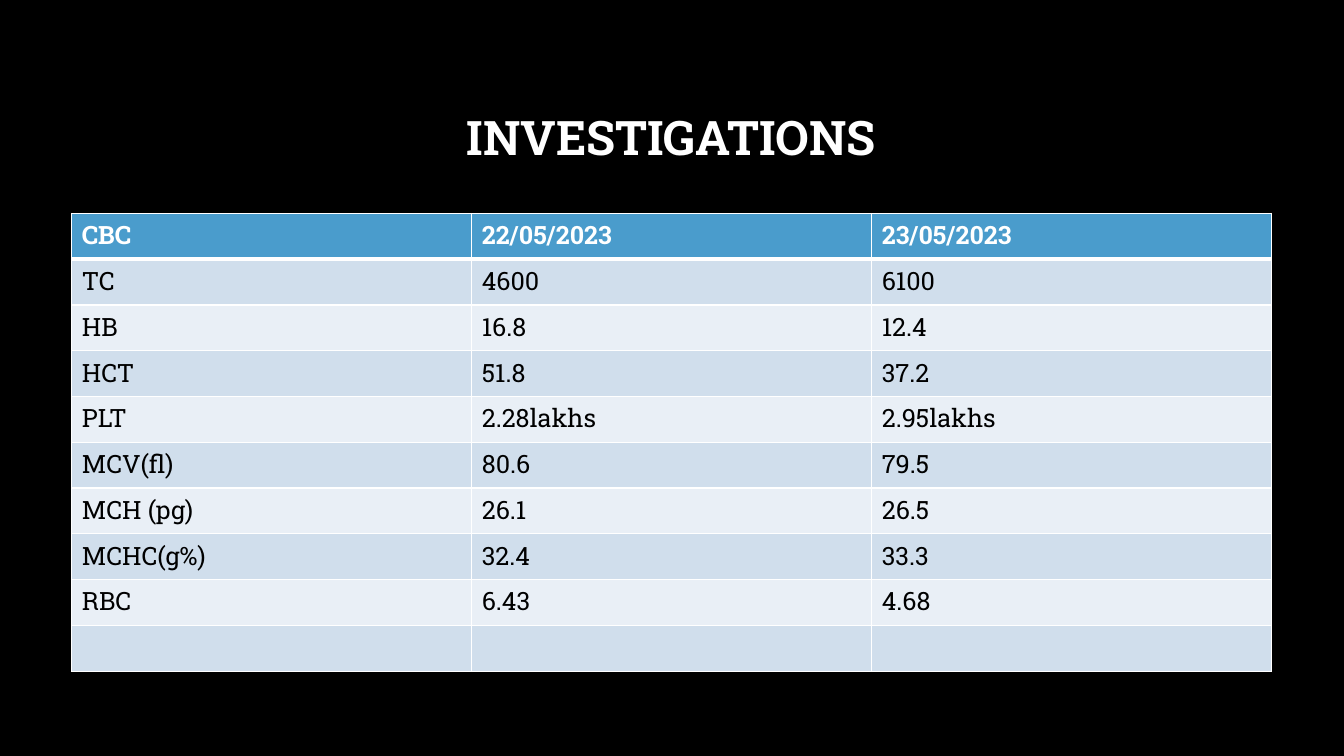
from lxml import etree
from pptx import Presentation
from pptx.dml.color import RGBColor
from pptx.enum import text
from pptx.oxml import ns
from pptx.util import Cm, Pt

COLORS = {
    "background": "000000",
    "light": "FFFFFF",
    "dark": "000000",
    "header": "4A9CCC",
    "odd": "D0DEEC",
    "even": "E9EFF6",
}
FONT = "Roboto Slab"
BLOOD_COUNTS = [
    ("CBC", "22/05/2023", "23/05/2023"),
    ("TC", "4600", "6100"),
    ("HB", "16.8", "12.4"),
    ("HCT", "51.8", "37.2"),
    ("PLT", "2.28lakhs", "2.95lakhs"),
    ("MCV(fl)", "80.6", "79.5"),
    ("MCH (pg)", "26.1", "26.5"),
    ("MCHC(g%)", "32.4", "33.3"),
    ("RBC", "6.43", "4.68"),
    ("", "", ""),
]


def rgb(color):
    return RGBColor.from_string(COLORS[color])


def write(frame, wording, size=18, color="dark", bold=False,
          align=text.PP_ALIGN.LEFT, spacing=1.0):
    paragraph = frame.paragraphs[0]
    paragraph.alignment = align
    paragraph.line_spacing = spacing
    paragraph.font.size = Pt(size)
    if wording:
        run = paragraph.add_run()
        run.text = wording
        run.font.name = FONT
        run.font.size = Pt(size)
        run.font.bold = bold
        run.font.color.rgb = rgb(color)


def add_title(slide, wording):
    title = slide.shapes.add_textbox(Cm(2.54), Cm(1.7), Cm(28.75), Cm(3.68))
    frame = title.text_frame
    frame.word_wrap = True
    frame.vertical_anchor = text.MSO_ANCHOR.MIDDLE
    write(frame, wording, size=34, color="light", bold=True,
          align=text.PP_ALIGN.CENTER, spacing=0.9)


def set_borders(cell, **widths):
    properties = cell._tc.get_or_add_tcPr()
    for side in "LRTB":
        line = etree.SubElement(properties, ns.qn(f"a:ln{side}"),
                                w=str(Pt(widths.get(side, 1))))
        fill = etree.SubElement(line, ns.qn("a:solidFill"))
        etree.SubElement(fill, ns.qn("a:srgbClr"), val=COLORS["light"])


def fill_cell(cell, wording, row):
    header = row == 0
    set_borders(cell, T=3 if row == 1 else 1, B=3 if header else 1)
    cell.fill.solid()
    cell.fill.fore_color.rgb = rgb("header" if header else "odd" if row % 2 else "even")
    write(cell.text_frame, wording, color="light" if header else "dark", bold=header)


def add_results(slide, results):
    table = slide.shapes.add_table(len(results), len(results[0]), Cm(1.81), Cm(5.38),
                                   Cm(30.24), Cm(11.54)).table
    for row, values in enumerate(results):
        for column, value in enumerate(values):
            fill_cell(table.cell(row, column), value, row)


def main():
    deck = Presentation()
    deck.slide_width, deck.slide_height = Cm(33.87), Cm(19.05)
    slide = deck.slides.add_slide(deck.slide_layouts[6])
    slide.background.fill.solid()
    slide.background.fill.fore_color.rgb = rgb("background")
    add_title(slide, "INVESTIGATIONS")
    add_results(slide, BLOOD_COUNTS)
    deck.save("out.pptx")


if __name__ == "__main__":
    main()
